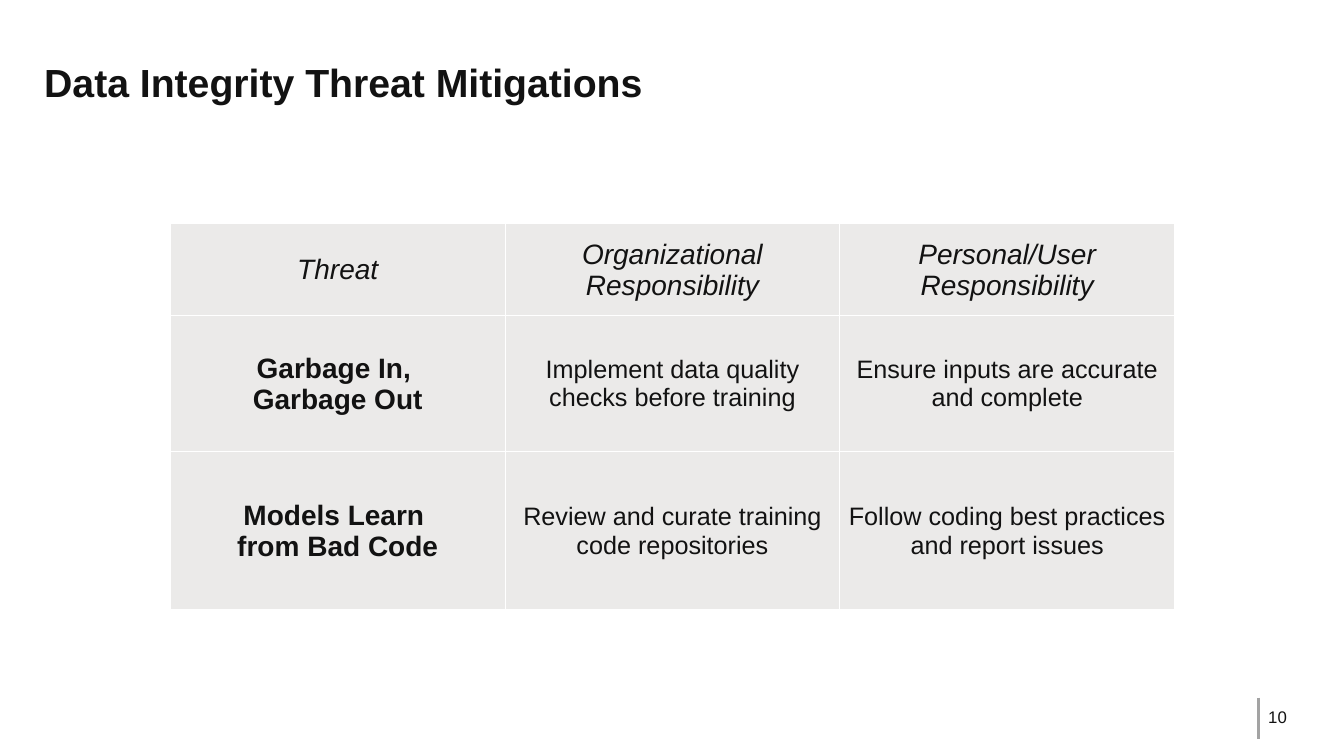
from lxml import etree
from pptx import Presentation, util as u
from pptx.dml.color import RGBColor
from pptx.enum import shapes, text
from pptx.oxml.ns import qn

# Content: each cell is a list of paragraphs
TITLE = "Data Integrity Threat Mitigations"
PAGE_NUMBER = "10"
ROWS = [
    [["Threat"], ["Organizational Responsibility"], ["Personal/User Responsibility"]],
    [["Garbage In, ", "Garbage Out"],
     ["Implement data quality checks before training"],
     ["Ensure inputs are accurate and complete"]],
    [["Models Learn ", "from Bad Code"],
     ["Review and curate training code repositories"],
     ["Follow coding best practices and report issues"]],
]

# Layout and style
WIDTH, HEIGHT = 13.33, 7.5
TABLE_LEFT, TABLE_TOP = 1.69, 2.22
COLUMN_WIDTH, ROW_HEIGHTS = 3.32, [0.91, 1.35, 1.57]
FOOTER_LEFT = 12.48
FONT, INK, CELL_FILL, RULE, BORDER = "Arial", "121212", "EBEAE9", "A3A3A3", "FFFFFF"
HEADER = dict(size=20, italic=True)
THREAT = dict(size=20, bold=True)
BODY = dict(size=18)


def color(value):
    return RGBColor.from_string(value)


def write(frame, lines, size, bold=False, italic=False, align=text.PP_ALIGN.LEFT):
    frame.word_wrap = True
    for index, line in enumerate(lines):
        para = frame.add_paragraph() if index else frame.paragraphs[0]
        para.alignment = align
        span = para.add_run()
        span.text = line
        font = span.font
        font.name, font.size, font.bold, font.italic = FONT, u.Pt(size), bold, italic
        font.color.rgb = color(INK)


def add_text(page, place, line, size, bold=False, anchor=text.MSO_ANCHOR.TOP):
    box = page.shapes.add_textbox(*map(u.Inches, place))
    box.text_frame.vertical_anchor = anchor
    write(box.text_frame, [line], size, bold)


def add_borders(cell):
    props = cell._tc.get_or_add_tcPr()
    for index, side in enumerate(("a:lnL", "a:lnR", "a:lnT", "a:lnB")):
        edge = etree.Element(qn(side), w=str(u.Pt(1)))
        fill = etree.SubElement(edge, qn("a:solidFill"))
        etree.SubElement(fill, qn("a:srgbClr"), val=BORDER)
        props.insert(index, edge)


def add_threat_table(page):
    frame = page.shapes.add_table(
        len(ROWS), len(ROWS[0]), u.Inches(TABLE_LEFT), u.Inches(TABLE_TOP),
        u.Inches(COLUMN_WIDTH * len(ROWS[0])), u.Inches(sum(ROW_HEIGHTS)))
    table = frame.table
    table.horz_banding = False
    for column in table.columns:
        column.width = u.Inches(COLUMN_WIDTH)
    for r, row in enumerate(ROWS):
        table.rows[r].height = u.Inches(ROW_HEIGHTS[r])
        for c, lines in enumerate(row):
            cell = table.cell(r, c)
            cell.fill.solid()
            cell.fill.fore_color.rgb = color(CELL_FILL)
            cell.vertical_anchor = text.MSO_ANCHOR.MIDDLE
            cell.margin_left = cell.margin_right = cell.margin_top = u.Inches(0.01)
            cell.margin_bottom = 0
            style = HEADER if r == 0 else THREAT if c == 0 else BODY
            write(cell.text_frame, lines, align=text.PP_ALIGN.CENTER, **style)
            add_borders(cell)


def main():
    deck = Presentation()
    deck.slide_width, deck.slide_height = u.Inches(WIDTH), u.Inches(HEIGHT)
    page = deck.slides.add_slide(deck.slide_layouts[6])

    # Footer: page number beside a short rule
    add_text(page, (FOOTER_LEFT, 6.98, 0.52, 0.27), PAGE_NUMBER, 12,
             anchor=text.MSO_ANCHOR.MIDDLE)
    rule = page.shapes.add_connector(
        shapes.MSO_CONNECTOR.STRAIGHT, u.Inches(FOOTER_LEFT), u.Inches(6.92),
        u.Inches(FOOTER_LEFT), u.Inches(7.33))
    rule.line.color.rgb = color(RULE)
    rule.line.width = u.Pt(2)
    etree.SubElement(rule._element.spPr, qn("a:effectLst"))

    # Title and table
    add_text(page, (0.34, 0.37, 12.65, 0.89), TITLE, 28, bold=True,
             anchor=text.MSO_ANCHOR.MIDDLE)
    add_threat_table(page)
    deck.save("out.pptx")


if __name__ == "__main__":
    main()
